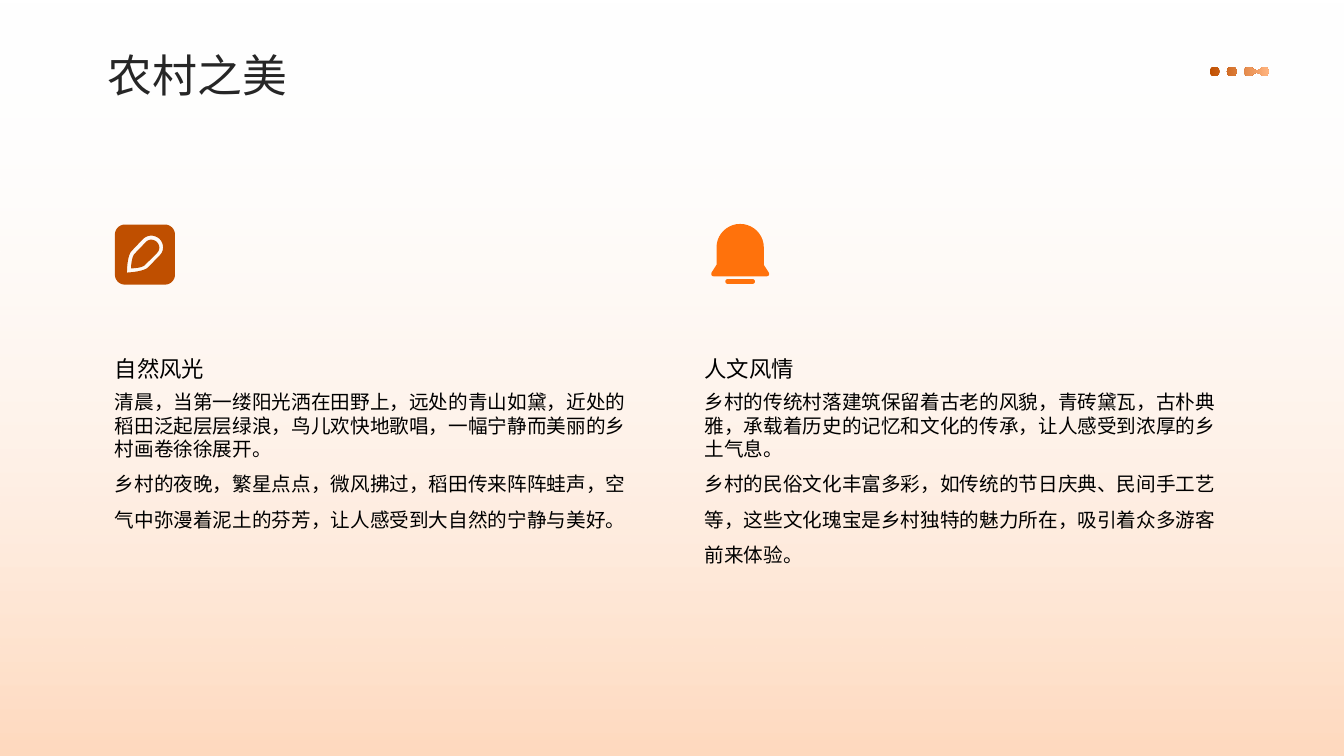
from lxml import etree
from pptx import Presentation
from pptx.dml.color import RGBColor
from pptx.enum.shapes import MSO_SHAPE
from pptx.enum.text import MSO_ANCHOR
from pptx.oxml.ns import qn
from pptx.util import Pt

RECTANGLE = MSO_SHAPE.RECTANGLE
TOP, MIDDLE, BOTTOM = MSO_ANCHOR.TOP, MSO_ANCHOR.MIDDLE, MSO_ANCHOR.BOTTOM
FONT = "Noto Sans CJK SC"
CURVE_STEPS = 10

deck = Presentation()
deck.slide_width, deck.slide_height = Pt(960), Pt(540)
page = deck.slides.add_slide(deck.slide_layouts[6])


def add_outline(left, top, contours):
    """Draw closed contours as one shape; 2 numbers make a line, 6 a Bezier curve."""
    builder = None
    for start, *steps in contours:
        points = [start]
        for step in steps:
            if len(step) == 2:
                points.append(step)
                continue
            anchors = [points[-1], step[0:2], step[2:4], step[4:6]]
            for number in range(1, CURVE_STEPS + 1):
                t = number / CURVE_STEPS
                weights = ((1 - t) ** 3, 3 * t * (1 - t) ** 2, 3 * t * t * (1 - t), t ** 3)
                points.append(tuple(sum(w * a[axis] for w, a in zip(weights, anchors))
                                    for axis in (0, 1)))
        scaled = [(Pt(x), Pt(y)) for x, y in points]
        if builder is None:
            builder = page.shapes.build_freeform(*scaled[0])
        else:
            builder.move_to(*scaled[0])
        builder.add_line_segments(scaled[1:], close=True)
    shape = builder.convert_to_shape(Pt(left), Pt(top))
    shape.shadow.inherit = False
    shape.line.fill.background()
    return shape


def add_text(left, top, width, height, anchor, size, color, paragraphs):
    """Add a text box; paragraphs are pairs of text and line spacing."""
    box = page.shapes.add_textbox(Pt(left), Pt(top), Pt(width), Pt(height))
    frame = box.text_frame
    frame.word_wrap = True
    frame.vertical_anchor = anchor
    frame.margin_left = frame.margin_right = frame.margin_top = frame.margin_bottom = 0
    frame.text = "\n".join(text for text, spacing in paragraphs)
    for para, (text, spacing) in zip(frame.paragraphs, paragraphs):
        para.line_spacing = spacing
        span = para.runs[0]
        span.font.size = Pt(size)
        span.font.name = FONT
        span.font.color.rgb = RGBColor.from_string(color)
        etree.SubElement(span.font._element, qn("a:ea")).set("typeface", FONT)


# Backdrop, dots and their gradients
backdrop = page.shapes.add_shape(RECTANGLE, 0, 0, deck.slide_width, deck.slide_height)
backdrop.shadow.inherit = False
backdrop.line.fill.background()

single_dots = [
    [(x, 0), (x + 4.6, 0, x + 4.6, 7, x, 7), (x - 4.6, 7, x - 4.6, 0, x, 0)]
    for x in (3.5, 15.9)
]
joined_dots = [
    (28.3, 0), (29.4, 0, 30.4, 0.6, 31, 1.4), (32.4, 2.9, 35.2, 2.9, 36.6, 1.4),
    (37.2, 0.6, 38.1, 0, 39, 0), (43.6, 0, 43.6, 7, 39, 7),
    (38.1, 7, 37.2, 6.4, 36.6, 5.6), (35.2, 4.1, 32.4, 4.1, 31, 5.6),
    (30.4, 6.4, 29.4, 7, 28.3, 7), (23.7, 7, 23.7, 0, 28.3, 0),
]
dots = add_outline(864, 47.6, single_dots + [joined_dots])

for shape, angle, colors in (
    (backdrop, 270, ("FFFFFF", "FFDABF")),
    (dots, 0, ("BF4F00", "FFB47F")),
):
    shape.fill.gradient()
    shape.fill.gradient_angle = angle
    for stop, position, color in zip(shape.fill.gradient_stops, (0, 1), colors):
        stop.position = position
        stop.color.rgb = RGBColor.from_string(color)
clear_color = next(backdrop._element.iter(qn("a:srgbClr")))
etree.SubElement(clear_color, qn("a:alpha")).set("val", "0")

# Icons
tile = [
    (7.1, 0), (35.8, 0), (39.7, 0, 42.9, 3.2, 42.9, 7.1), (42.9, 35.8),
    (42.9, 39.7, 39.7, 42.9, 35.8, 42.9), (7.1, 42.9),
    (3.2, 42.9, 0, 39.7, 0, 35.8), (0, 7.1), (0, 3.2, 3.2, 0, 7.1, 0),
]
pencil_edge = [
    (25.9, 7.9), (23.8, 7.9, 21.6, 8.8, 20, 10.4), (11.8, 19),
    (8.6, 22.4, 8.6, 34.3, 8.6, 34.3), (8.6, 34.3, 20.2, 33.8, 23.6, 30.7), (32, 22),
    (35.2, 18.9, 35.2, 13.7, 32, 10.4), (30.4, 8.8, 28.1, 7.9, 25.9, 7.9),
]
pencil_core = [
    (25.9, 10.8), (27.4, 10.8, 28.9, 11.4, 30, 12.5), (32.3, 14.8, 32.3, 18.2, 30, 20.4),
    (21.4, 29), (19.9, 30.5, 15.8, 31.2, 11.5, 31.3), (11.6, 27, 12.6, 22.4, 13.9, 21),
    (22, 12.6), (23.1, 11.4, 24.5, 10.8, 25.9, 10.8),
]
bell = [
    (20.5, 0), (29.8, 0, 37.4, 7.5, 37.4, 16.8), (37.4, 29.2), (40.8, 34.5),
    (41.6, 35.9, 41, 37.4, 39.4, 37.4), (1.6, 37.4), (0, 37.4, -0.6, 35.9, 0.2, 34.5),
    (3.6, 29.2), (3.6, 16.8), (3.6, 7.5, 11.2, 0, 20.5, 0),
]
clapper = [
    (11.6, 39.4), (29.4, 39.4), (31.6, 39.4, 31.6, 42.8, 29.4, 42.8),
    (11.6, 42.8), (9.4, 42.8, 9.4, 39.4, 11.6, 39.4),
]
for left, top, color, contours in (
    (82.1, 160.4, "BF4F00", [tile, pencil_edge, pencil_core]),
    (508.2, 160, "FF720C", [bell, clapper]),
):
    icon = add_outline(left, top, contours)
    icon.fill.solid()
    icon.fill.fore_color.rgb = RGBColor.from_string(color)

# Title and columns
add_text(77, 33.1, 774.7, 36.7, MIDDLE, 32, "262626", [("农村之美", 1.1)])

columns = [
    (82, "自然风光",
     "清晨，当第一缕阳光洒在田野上，远处的青山如黛，近处的稻田泛起层层绿浪，鸟儿欢快地歌唱，一幅宁静而美丽的乡村画卷徐徐展开。",
     "乡村的夜晚，繁星点点，微风拂过，稻田传来阵阵蛙声，空气中弥漫着泥土的芬芳，让人感受到大自然的宁静与美好。"),
    (503.3, "人文风情",
     "乡村的传统村落建筑保留着古老的风貌，青砖黛瓦，古朴典雅，承载着历史的记忆和文化的传承，让人感受到浓厚的乡土气息。",
     "乡村的民俗文化丰富多彩，如传统的节日庆典、民间手工艺等，这些文化瑰宝是乡村独特的魅力所在，吸引着众多游客前来体验。"),
]
for left, heading, first, second in columns:
    add_text(left, 213.8, 373.7, 59, BOTTOM, 16, "000000", [(heading, 1.3)])
    add_text(left, 278.6, 373.7, 133.2, TOP, 14, "000000", [(first, 1.0), (second, 1.5)])

deck.save("out.pptx")
